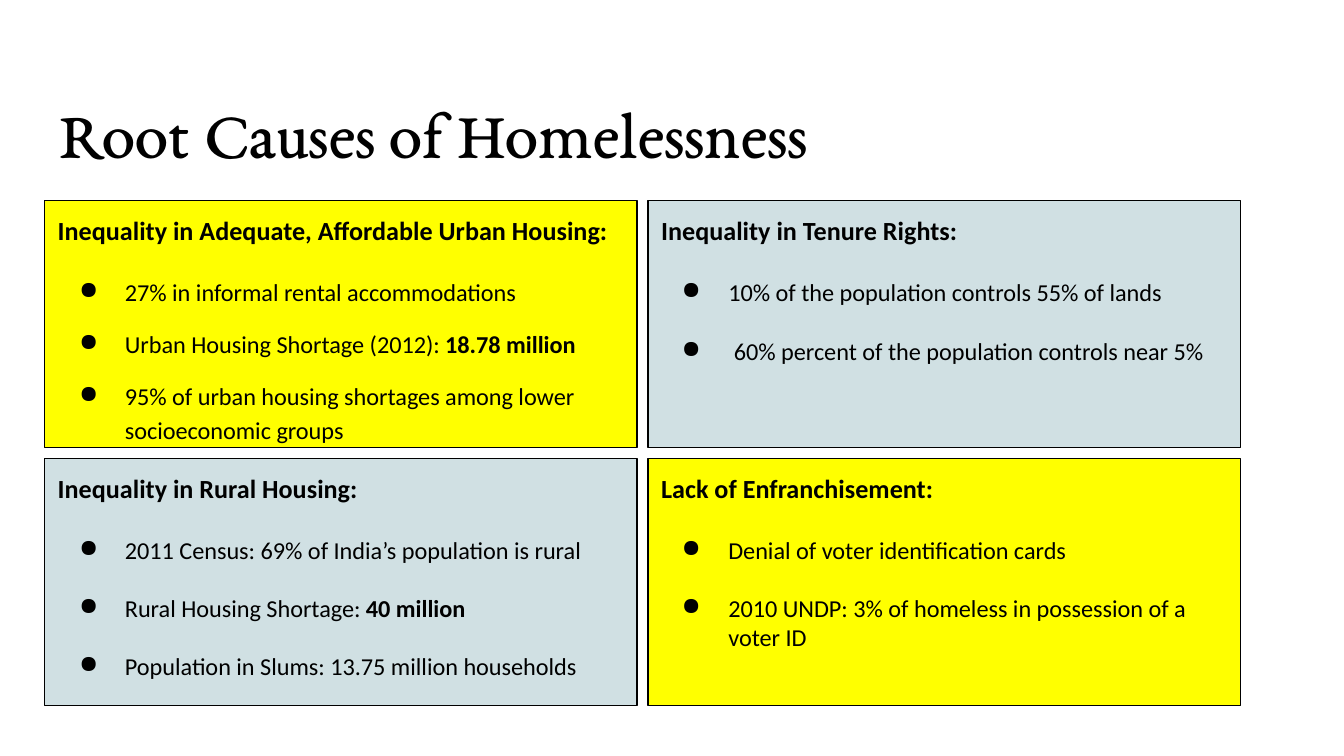
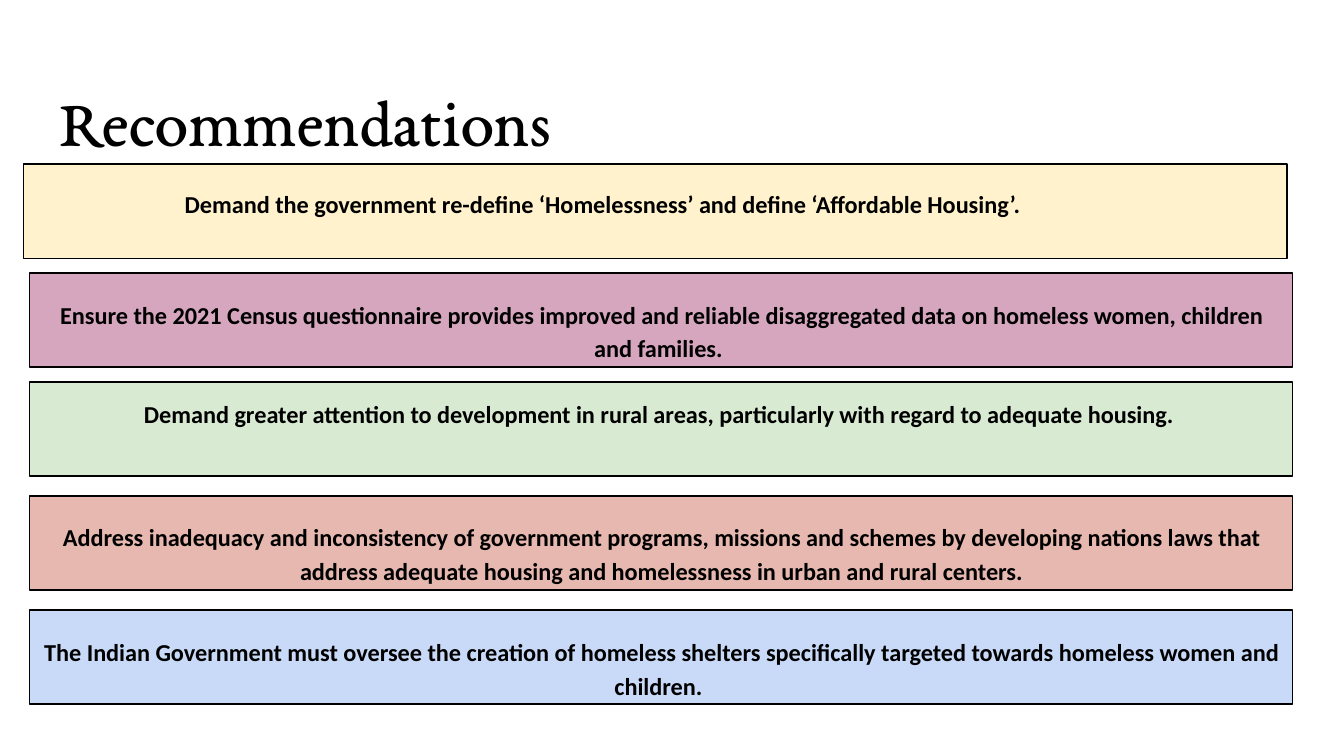
from collections import namedtuple

from lxml import etree
from pptx import Presentation
from pptx.dml.color import RGBColor
from pptx.enum.shapes import MSO_SHAPE
from pptx.enum.text import MSO_ANCHOR, MSO_AUTO_SIZE, PP_ALIGN
from pptx.oxml.ns import qn
from pptx.util import Pt

RECTANGLE = MSO_SHAPE.RECTANGLE
TOP = MSO_ANCHOR.TOP
NO_AUTOFIT = MSO_AUTO_SIZE.NONE
LEFT, CENTER = PP_ALIGN.LEFT, PP_ALIGN.CENTER

BLACK = RGBColor(0x00, 0x00, 0x00)
YELLOW = RGBColor(0xFF, 0xFF, 0x00)
GREY_BLUE = RGBColor(0xD0, 0xE0, 0xE3)
CREAM = RGBColor(0xFF, 0xF2, 0xCC)
MAUVE = RGBColor(0xD5, 0xA6, 0xBD)
GREEN = RGBColor(0xD9, 0xEA, 0xD3)
SALMON = RGBColor(0xE6, 0xB8, 0xAF)
BLUE = RGBColor(0xC9, 0xDA, 0xF8)

TITLE_FONT, BODY_FONT = "EB Garamond", "Calibri"
TITLE_ONLY = 5
INSET = 7.2

Box = namedtuple("Box", "left top width height")
Cause = namedtuple("Cause", "heading fill bullets gap line_spacing hanging")
Recommendation = namedtuple("Recommendation", "text fill left top inset_top inset_right")

TITLE_BOX = Box(24.5, 35.3, 671, 45.4)
CAUSES_BOX = Box(23.8, 107.4, 640.8, 270.7)
CAUSES_GAP = 5.8
BANNER_WIDTH, BANNER_HEIGHT = 676.8, 50.4

CAUSES = [
    Cause("Inequality in Adequate, Affordable Urban Housing:", YELLOW, [
        ("27% in informal rental accommodations", ""),
        ("Urban Housing Shortage (2012): ", "18.78 million"),
        ("95% of urban housing shortages among lower socioeconomic groups", ""),
    ], 10, 1.15, 24.5),
    Cause("Inequality in Tenure Rights:", GREY_BLUE, [
        ("10% of the population controls 55% of lands", ""),
        (" 60% percent of the population controls near 5%", ""),
    ], 16, 1, 25),
    Cause("Inequality in Rural Housing:", GREY_BLUE, [
        ("2011 Census: 69% of India’s population is rural", ""),
        ("Rural Housing Shortage: ", "40 million"),
        ("Population in Slums: 13.75 million households", ""),
    ], 15.5, 1, 24.5),
    Cause("Lack of Enfranchisement:", YELLOW, [
        ("Denial of voter identification cards", ""),
        ("2010 UNDP: 3% of homeless in possession of a voter ID", ""),
    ], 15.5, 1, 25),
]

RECOMMENDATIONS = [
    Recommendation("Demand the government re-define ‘Homelessness’ and define "
                   "‘Affordable Housing’.", CREAM, 12.7, 88, 11, 64),
    Recommendation("Ensure the 2021 Census questionnaire provides improved and reliable "
                   "disaggregated data on homeless women, children and families. ",
                   MAUVE, 15.8, 146.3, 12, INSET),
    Recommendation("Demand greater attention to development in rural areas, particularly "
                   "with regard to adequate housing. ", GREEN, 15.8, 204.6, INSET, INSET),
    Recommendation("Address inadequacy and inconsistency of government programs, missions "
                   "and schemes by developing nations laws that address adequate housing "
                   "and homelessness in urban and rural centers.",
                   SALMON, 15.8, 265.7, 12, INSET),
    Recommendation("The Indian Government must oversee the creation of homeless shelters "
                   "specifically targeted towards homeless women and children. ",
                   BLUE, 15.8, 326.9, 12.4, INSET),
]


def style_font(paragraph, name, size, bold=None):
    """Set the black font shared by all runs of a paragraph."""
    font = paragraph.font
    font.name, font.size, font.bold = name, Pt(size), bold
    font.color.rgb = BLACK


def set_frame(frame, top=INSET, right=INSET, bottom=INSET):
    """Wrap and top-anchor a text frame with the given insets."""
    frame.word_wrap = True
    frame.auto_size = NO_AUTOFIT
    frame.vertical_anchor = TOP
    frame.margin_left, frame.margin_top = Pt(INSET), Pt(top)
    frame.margin_right, frame.margin_bottom = Pt(right), Pt(bottom)


def add_titled_slide(deck, heading, line_spacing):
    """Add a slide with the shared title style."""
    slide = deck.slides.add_slide(deck.slide_layouts[TITLE_ONLY])
    title = slide.shapes.title
    title.left, title.top, title.width, title.height = map(Pt, TITLE_BOX)
    set_frame(title.text_frame)
    title.text_frame.text = heading
    paragraph = title.text_frame.paragraphs[0]
    paragraph.alignment = LEFT
    paragraph.line_spacing = line_spacing
    style_font(paragraph, TITLE_FONT, 36)
    return slide


def add_panel(slide, box, fill):
    """Draw a filled, outlined rectangle and return its text frame."""
    panel = slide.shapes.add_shape(RECTANGLE, *map(Pt, box))
    panel.shadow.inherit = False
    panel.fill.solid()
    panel.fill.fore_color.rgb = fill
    panel.line.color.rgb = BLACK
    panel.line.width = Pt(0.75)
    return panel.text_frame


def set_bullet(paragraph, hanging):
    """Give a paragraph a black round bullet with a hanging indent."""
    properties = paragraph._p.get_or_add_pPr()
    properties.set("marL", str(Pt(36)))
    properties.set("indent", str(-Pt(hanging)))
    color = etree.SubElement(properties, qn("a:buClr"))
    etree.SubElement(color, qn("a:srgbClr"), val=str(BLACK))
    etree.SubElement(properties, qn("a:buChar"), char="●")


def add_cause(slide, box, cause):
    """Fill a box with one cause: a bold heading over bullets."""
    frame = add_panel(slide, box, cause.fill)
    set_frame(frame)
    heading = frame.paragraphs[0]
    heading.text = cause.heading
    heading.alignment = LEFT
    style_font(heading, BODY_FONT, 14, True)
    for index, (statement, figure) in enumerate(cause.bullets):
        bullet = frame.add_paragraph()
        set_bullet(bullet, cause.hanging)
        bullet.alignment = LEFT
        bullet.space_before = Pt(cause.gap if index else 17)
        bullet.line_spacing = cause.line_spacing if index else 1
        style_font(bullet, BODY_FONT, 13)
        bullet.add_run().text = statement
        if figure:
            emphasis = bullet.add_run()
            emphasis.text = figure
            emphasis.font.bold = True


def add_cause_grid(slide, box):
    """Arrange the causes two by two within the box."""
    width = (box.width - CAUSES_GAP) / 2
    height = (box.height - CAUSES_GAP) / 2
    for index, cause in enumerate(CAUSES):
        row, column = divmod(index, 2)
        cell = Box(box.left + column * (width + CAUSES_GAP),
                   box.top + row * (height + CAUSES_GAP), width, height)
        add_cause(slide, cell, cause)


def add_recommendation(slide, box, recommendation):
    """Fill a banner box with one centred recommendation."""
    frame = add_panel(slide, box, recommendation.fill)
    set_frame(frame, recommendation.inset_top, recommendation.inset_right, 0)
    paragraph = frame.paragraphs[0]
    paragraph.text = recommendation.text
    paragraph.alignment = CENTER
    paragraph.line_spacing = 1.15
    style_font(paragraph, BODY_FONT, 13, True)


def main():
    """Build and save the two slides."""
    deck = Presentation()
    deck.slide_width, deck.slide_height = Pt(720), Pt(405)
    causes = add_titled_slide(deck, "Root Causes of Homelessness", 1.15)
    add_cause_grid(causes, CAUSES_BOX)
    advice = add_titled_slide(deck, "Recommendations", 1)
    for recommendation in RECOMMENDATIONS:
        banner = Box(recommendation.left, recommendation.top, BANNER_WIDTH, BANNER_HEIGHT)
        add_recommendation(advice, banner, recommendation)
    deck.save("out.pptx")


if __name__ == "__main__":
    main()
